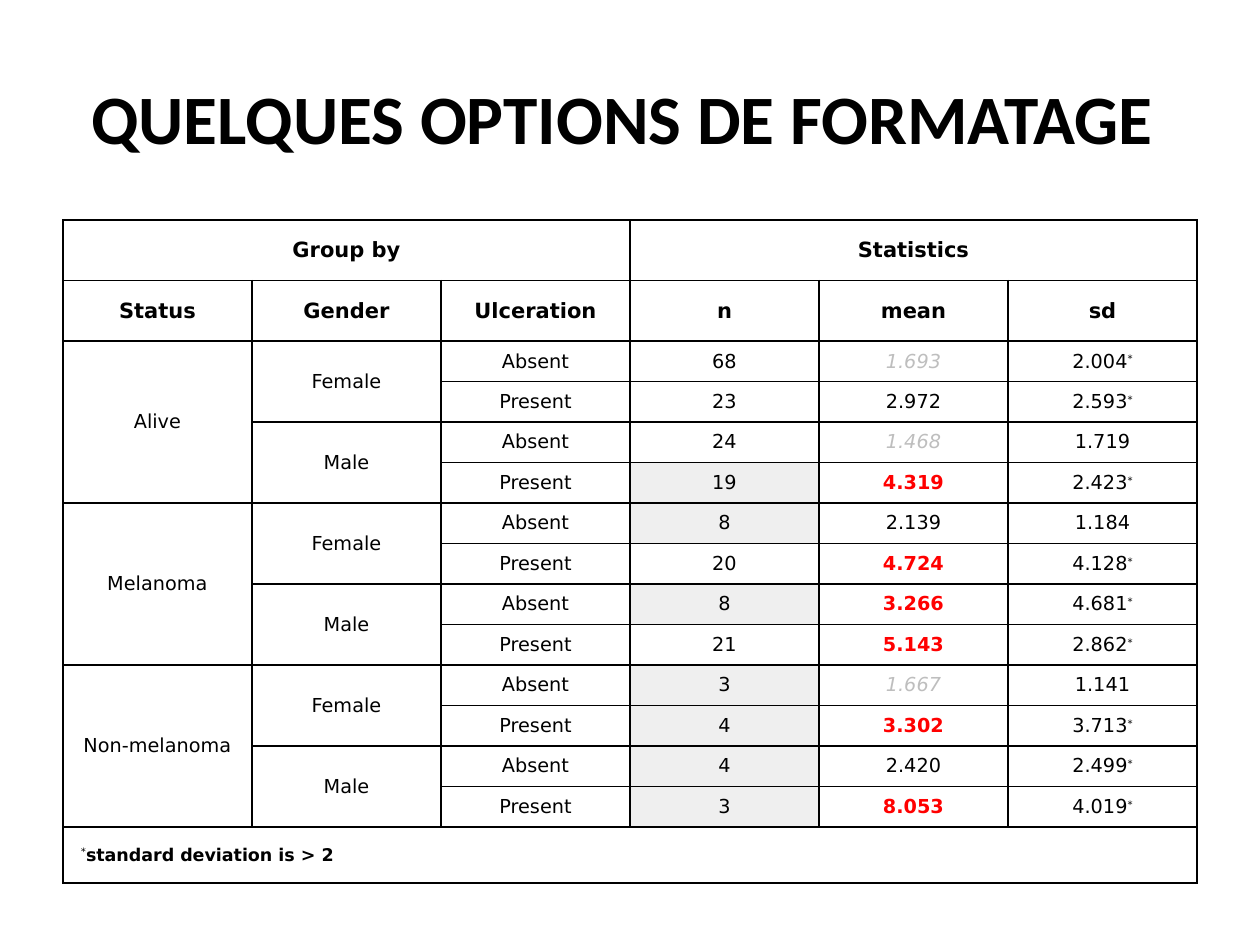
from itertools import product

from lxml.etree import SubElement
from pptx import Presentation
from pptx.dml.color import RGBColor
from pptx.enum.text import MSO_ANCHOR as Anchor, MSO_AUTO_SIZE as AutoSize, PP_ALIGN as Align
from pptx.oxml.ns import qn
from pptx.util import Pt

TITLE = "QUELQUES OPTIONS DE FORMATAGE "
GROUPS = ["Group by", "Statistics"]
HEADERS = ["Status", "Gender", "Ulceration", "n", "mean", "sd"]
STATUSES = ["Alive", "Melanoma", "Non-melanoma"]
GENDERS = ["Female", "Male"]
ULCERATIONS = ["Absent", "Present"]
STATS = [
    (68, 1.693, 2.004), (23, 2.972, 2.593), (24, 1.468, 1.719), (19, 4.319, 2.423),
    (8, 2.139, 1.184), (20, 4.724, 4.128), (8, 3.266, 4.681), (21, 5.143, 2.862),
    (3, 1.667, 1.141), (4, 3.302, 3.713), (4, 2.420, 2.499), (3, 8.053, 4.019),
]
FOOTNOTE = "standard deviation is > 2"

SMALL_N, LOW_MEAN, HIGH_MEAN, HIGH_SD = 20, 2, 3, 2
LEFT, TOP, COL_W = 63, 220, 189
HEAD_H, BODY_H, FOOT_H = 60, 40, 55
WIDE, NARROW = 18, 9


def px(n):
    return round(n * 914400 / 126)


def rgb(color):
    return RGBColor.from_string(color)


def add_text(p, text, size=11, color="000000", bold=False, italic=False,
             font="DejaVu Sans", raised=False):
    r = p.add_run()
    r.text = text
    f = r.font
    f.name, f.size, f.bold, f.italic = font, Pt(size), bold, italic
    f.color.rgb = rgb(color)
    if raised:
        r._r.get_or_add_rPr().set("baseline", "30000")


def set_borders(cell):
    tcPr = cell._tc.get_or_add_tcPr()
    for i, side in enumerate(("lnL", "lnR", "lnT", "lnB")):
        ln = tcPr.makeelement(qn(f"a:{side}"), {"w": str(Pt(1))})
        SubElement(SubElement(ln, qn("a:solidFill")), qn("a:srgbClr"), val="000000")
        tcPr.insert(i, ln)


def fill_cell(row, col, text="", margin=NARROW, align=Align.CENTER, **fmt):
    cell = tbl.cell(row, col)
    cell.margin_left = cell.margin_right = px(margin)
    cell.margin_top = cell.margin_bottom = px(margin)
    cell.vertical_anchor = Anchor.MIDDLE
    p = cell.text_frame.paragraphs[0]
    p.alignment = align
    if align == Align.CENTER:
        p.space_before = p.space_after = Pt(2)
        pPr = p._p.get_or_add_pPr()
        pPr.set("marL", str(Pt(2)))
        pPr.set("marR", str(Pt(2)))
    if text:
        add_text(p, text, **fmt)
    return p


def merge(row, col, rows, cols):
    tbl.cell(row, col).merge(tbl.cell(row + rows - 1, col + cols - 1))


prs = Presentation()
prs.slide_width, prs.slide_height = px(1260), px(945)
s = prs.slides.add_slide(prs.slide_layouts[5])

tf = s.shapes.title.text_frame
tf.auto_size = AutoSize.NONE
tf.vertical_anchor = Anchor.MIDDLE
tf.paragraphs[0].alignment = Align.CENTER
add_text(tf.paragraphs[0], TITLE, size=39.6, bold=True, font="Calibri")

heights = [HEAD_H] * 2 + [BODY_H] * len(STATS) + [FOOT_H]
foot = len(heights) - 1
frame = s.shapes.add_table(len(heights), len(HEADERS), px(LEFT), px(TOP),
                           px(COL_W * len(HEADERS)), px(sum(heights)))
tbl = frame.table
tbl.first_row = tbl.horz_banding = False
for column in tbl.columns:
    column.width = px(COL_W)
for row, height in zip(tbl.rows, heights):
    row.height = px(height)
for cell in tbl.iter_cells():
    cell.fill.solid()
    cell.fill.fore_color.rgb = rgb("FFFFFF")
    set_borders(cell)

for i, group in enumerate(GROUPS):
    fill_cell(0, i * 3, group, WIDE, size=12, bold=True)
    merge(0, i * 3, 1, 3)
for col, header in enumerate(HEADERS):
    fill_cell(1, col, header, WIDE, size=12, bold=True)

keys = product(STATUSES, GENDERS, ULCERATIONS)
for i, ((status, gender, ulceration), (n, mean, sd)) in enumerate(zip(keys, STATS)):
    row = i + 2
    for col, (label, span) in enumerate([(status, 4), (gender, 2), (ulceration, 1)]):
        if i % span == 0:
            fill_cell(row, col, label)
            if span > 1:
                merge(row, col, span, 1)
    fill_cell(row, 3, str(n))
    if n < SMALL_N:
        tbl.cell(row, 3).fill.fore_color.rgb = rgb("EFEFEF")
    low, high = mean < LOW_MEAN, mean > HIGH_MEAN
    color = "BEBEBE" if low else "FF0000" if high else "000000"
    fill_cell(row, 4, f"{mean:.3f}", color=color, bold=high, italic=low)
    p = fill_cell(row, 5, f"{sd:.3f}")
    if sd > HIGH_SD:
        add_text(p, "*", size=10, raised=True)

p = fill_cell(foot, 0, "*", WIDE, Align.LEFT, size=10, raised=True)
add_text(p, FOOTNOTE, size=10, bold=True)
merge(foot, 0, 1, len(HEADERS))

prs.save("out.pptx")
